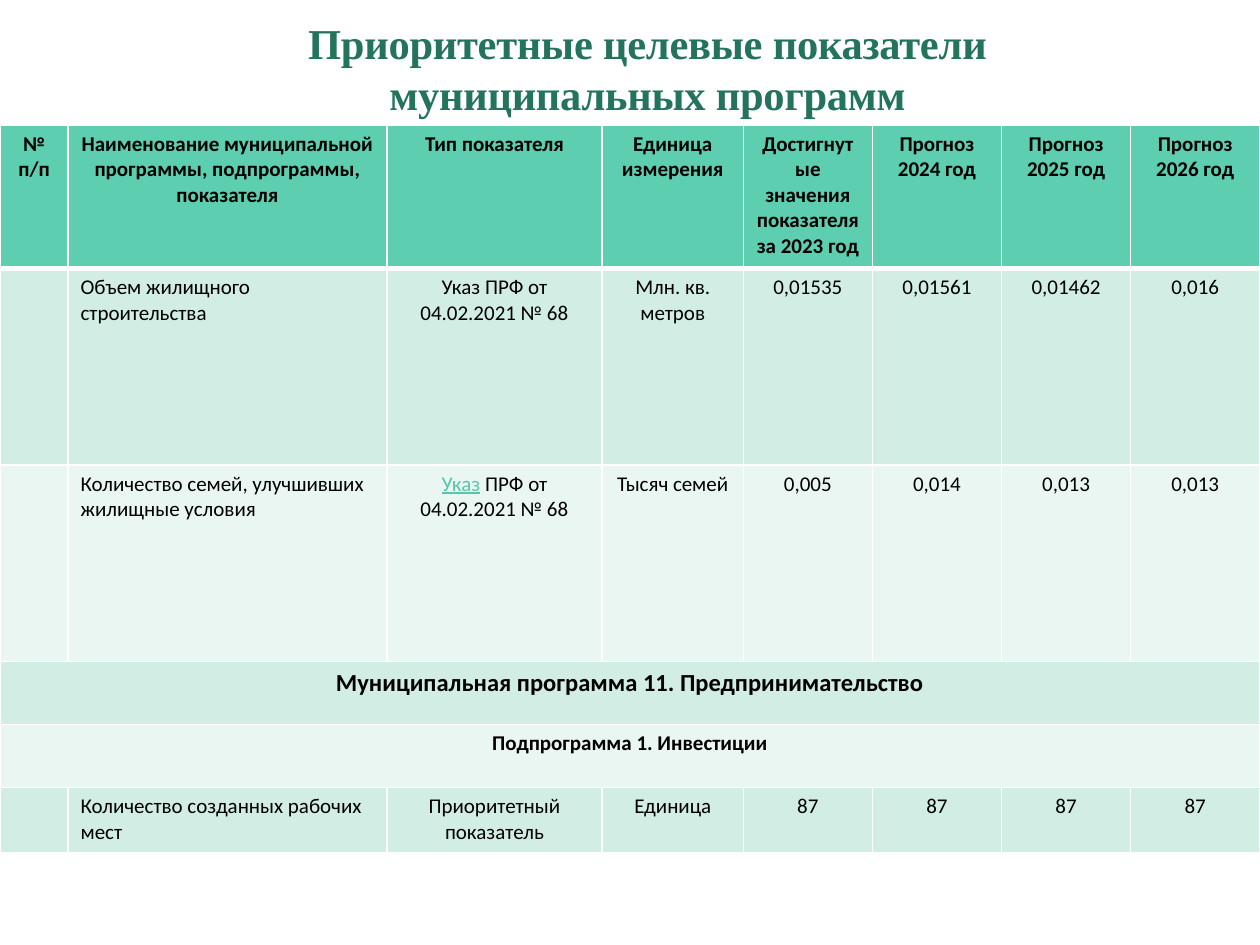
from dataclasses import dataclass

from lxml.etree import SubElement
from pptx import Presentation
from pptx.dml.color import RGBColor
from pptx.enum.text import MSO_ANCHOR, MSO_AUTO_SIZE, PP_ALIGN
from pptx.oxml.ns import qn
from pptx.util import Inches, Pt


@dataclass(frozen=True)
class Theme:
    title_font: str = "Times New Roman"
    body_font: str = "Calibri"
    title_color: str = "23735D"
    ink: str = "000000"
    link: str = "56C7AA"
    header_fill: str = "5DCEAF"
    bands: tuple = ("D2EDE3", "EAF6F2")
    border: str = "FFFFFF"
    title_size: float = 24.3
    program_size: float = 14
    body_size: float = 12


THEME = Theme()

COLUMN_WIDTHS = [0.54, 2.53, 1.71, 1.12]  # the four value columns share the rest
VALUE_COLUMNS = 4
ROW_HEIGHTS = [1.14, 1.56, 1.56, 0.5, 0.5, 0.52]
DECREE = "Указ"
DECREE_DETAILS = " ПРФ от 04.02.2021 № 68"
HEADER = ["№ п/п", "Наименование муниципальной программы, подпрограммы, показателя",
          "Тип показателя", "Единица измерения",
          "Достигнутые значения показателя за 2023 год",
          *(f"Прогноз {year} год" for year in (2024, 2025, 2026))]
PROGRAM = "Муниципальная программа 11. Предпринимательство"
SUBPROGRAM = "Подпрограмма 1. Инвестиции"
INDICATORS = {
    1: ["", "Объем жилищного строительства", DECREE + DECREE_DETAILS,
        "Млн. кв. метров", "0,01535", "0,01561", "0,01462", "0,016"],
    2: ["", "Количество семей, улучшивших жилищные условия", "",
        "Тысяч семей", "0,005", "0,014", "0,013", "0,013"],
    5: ["", "Количество созданных рабочих мест", "Приоритетный показатель",
        "Единица", *["87"] * VALUE_COLUMNS],
}


def add_text(paragraph, text, *, size=THEME.body_size, font=THEME.body_font,
             color=THEME.ink, bold=False, underline=False,
             align=PP_ALIGN.CENTER, spacing=None):
    """Append one formatted run to the paragraph."""
    paragraph.alignment = align
    run = paragraph.add_run()
    run.text = text
    run.font.size, run.font.name = Pt(size), font
    run.font.bold, run.font.underline = bold, underline
    run.font.color.rgb = RGBColor.from_string(color)
    if spacing is not None:
        run.font._element.set("spc", str(round(spacing * 100)))


def style_cell(cell, fill, bottom_width=1):
    """Fill the cell and draw its four borders."""
    properties = cell._tc.get_or_add_tcPr()
    for side in ("lnL", "lnR", "lnT", "lnB"):
        width = bottom_width if side == "lnB" else 1
        line = SubElement(properties, qn(f"a:{side}"), w=str(Pt(width)))
        solid = SubElement(line, qn("a:solidFill"))
        SubElement(solid, qn("a:srgbClr"), val=THEME.border)
    cell.fill.solid()
    cell.fill.fore_color.rgb = RGBColor.from_string(fill)


def place_title(slide, left, top, width, height):
    title = slide.shapes.title
    title.left, title.top, title.width, title.height = left, top, width, height
    frame = title.text_frame
    frame.word_wrap = True
    frame.auto_size = MSO_AUTO_SIZE.NONE
    frame.vertical_anchor = MSO_ANCHOR.MIDDLE
    frame.margin_top, frame.margin_bottom = 0, Inches(0.2)
    heading = frame.paragraphs[0]
    heading.line_spacing = Pt(29)
    style = dict(size=THEME.title_size, font=THEME.title_font,
                 color=THEME.title_color, bold=True, spacing=-0.1)
    add_text(heading, "Приоритетные целевые показатели", **style)
    heading.add_line_break()
    add_text(heading, "муниципальных программ", **style)


def place_indicators(slide, left, top, width, height):
    table = slide.shapes.add_table(len(ROW_HEIGHTS), len(HEADER),
                                   left, top, width, height).table
    # Grid
    fixed = [Inches(w) for w in COLUMN_WIDTHS]
    value_width = (width - sum(fixed)) // VALUE_COLUMNS
    for column, column_width in zip(table.columns, fixed + [value_width] * VALUE_COLUMNS):
        column.width = column_width
    for index, row in enumerate(table.rows):
        row.height = Inches(ROW_HEIGHTS[index])
        for cell in row.cells:
            if index == 0:
                style_cell(cell, THEME.header_fill, bottom_width=3)
            else:
                style_cell(cell, THEME.bands[(index - 1) % 2])

    def paragraph_at(row, column):
        return table.cell(row, column).text_frame.paragraphs[0]

    # Header
    for column, label in enumerate(HEADER):
        add_text(paragraph_at(0, column), label, bold=True)

    # Indicators
    for row, values in INDICATORS.items():
        for column, value in enumerate(values):
            if value:
                add_text(paragraph_at(row, column), value,
                         align=PP_ALIGN.LEFT if column == 1 else PP_ALIGN.CENTER)
    decree = paragraph_at(2, 2)
    add_text(decree, DECREE, color=THEME.link, underline=True)
    add_text(decree, DECREE_DETAILS)

    # Program headings across the whole table
    for row, heading, size in ((3, PROGRAM, THEME.program_size),
                               (4, SUBPROGRAM, THEME.body_size)):
        table.cell(row, 0).merge(table.cell(row, len(HEADER) - 1))
        add_text(paragraph_at(row, 0), heading, size=size, bold=True)


def main():
    deck = Presentation()
    deck.slide_width, deck.slide_height = Inches(10), Inches(7.5)
    slide = deck.slides.add_slide(deck.slide_layouts[5])
    place_title(slide, Inches(0.2), Inches(0.13), Inches(9.88), Inches(1.02))
    place_indicators(slide, 0, Inches(0.99), Inches(10), Inches(sum(ROW_HEIGHTS)))
    deck.save("out.pptx")


if __name__ == "__main__":
    main()
